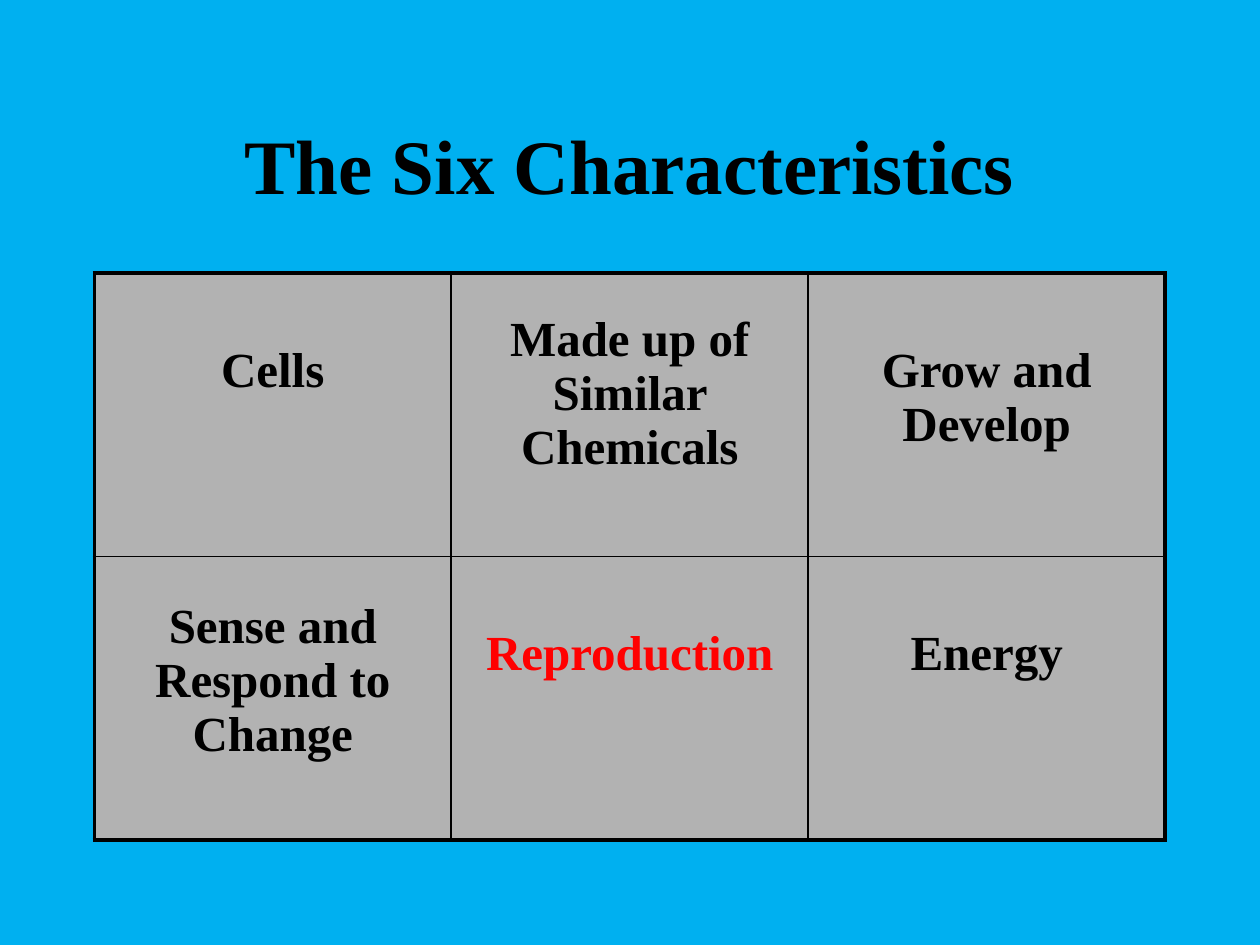
import pptx
import pptx.util
import pptx.dml.color
import pptx.enum.text
import pptx.oxml.ns
from lxml import etree
from pptx.util import Cm, Pt

COLORS = {"sky": "00B0F0", "cell": "B2B2B2", "ink": "000000", "highlight": "FF0000"}
FONT = "Times New Roman"
OUTER, INNER = Pt(2.25), Pt(1)


def add_text(frame, text, size, color):
    paragraph = frame.paragraphs[0]
    paragraph.alignment = pptx.enum.text.PP_ALIGN.CENTER
    run = paragraph.add_run()
    run.text = text
    run.font.name = FONT
    run.font.size = Pt(size)
    run.font.bold = True
    run.font.color.rgb = pptx.dml.color.RGBColor.from_string(COLORS[color])


def set_borders(cell, widths):
    """Draw borders in the order left, right, top, bottom, ahead of the fill."""
    properties = cell._tc.get_or_add_tcPr()
    for index, (tag, width) in enumerate(zip(("a:lnL", "a:lnR", "a:lnT", "a:lnB"), widths)):
        line = etree.Element(pptx.oxml.ns.qn(tag), w=str(width))
        fill = etree.SubElement(line, pptx.oxml.ns.qn("a:solidFill"))
        etree.SubElement(fill, pptx.oxml.ns.qn("a:srgbClr"), val=COLORS["ink"])
        properties.insert(index, line)


deck = pptx.Presentation()
deck.slide_width, deck.slide_height = Cm(25.4), Cm(19.05)
slide = deck.slides.add_slide(deck.slide_layouts[5])
slide.background.fill.solid()
slide.background.fill.fore_color.rgb = pptx.dml.color.RGBColor.from_string(COLORS["sky"])

title = slide.shapes.title
title.left, title.top, title.width, title.height = Cm(1.9), Cm(1.7), Cm(21.59), Cm(3.18)
title.text_frame.vertical_anchor = pptx.enum.text.MSO_ANCHOR.MIDDLE
add_text(title.text_frame, "The Six Characteristics", 44, "ink")

# Each entry: text, space above it in cm, color
characteristics = [
    [("Cells", 1.43, "ink"),
     ("Made up of Similar Chemicals", 0.8, "ink"),
     ("Grow and Develop", 1.43, "ink")],
    [("Sense and Respond to Change", 0.87, "ink"),
     ("Reproduction", 1.43, "highlight"),
     ("Energy", 1.43, "ink")],
]
last_row, last_column = len(characteristics) - 1, len(characteristics[0]) - 1
grid = slide.shapes.add_table(last_row + 1, last_column + 1,
                              Cm(1.9), Cm(5.5), Cm(21.59), Cm(11.43)).table
grid.first_row = grid.horz_banding = False

for r, row in enumerate(characteristics):
    for c, (text, space_above, color) in enumerate(row):
        cell = grid.cell(r, c)
        cell.margin_top = Cm(space_above)
        cell.fill.solid()
        cell.fill.fore_color.rgb = pptx.dml.color.RGBColor.from_string(COLORS["cell"])
        edges = (c == 0, c == last_column, r == 0, r == last_row)
        set_borders(cell, [OUTER if edge else INNER for edge in edges])
        add_text(cell.text_frame, text, 28, color)

deck.save("out.pptx")
